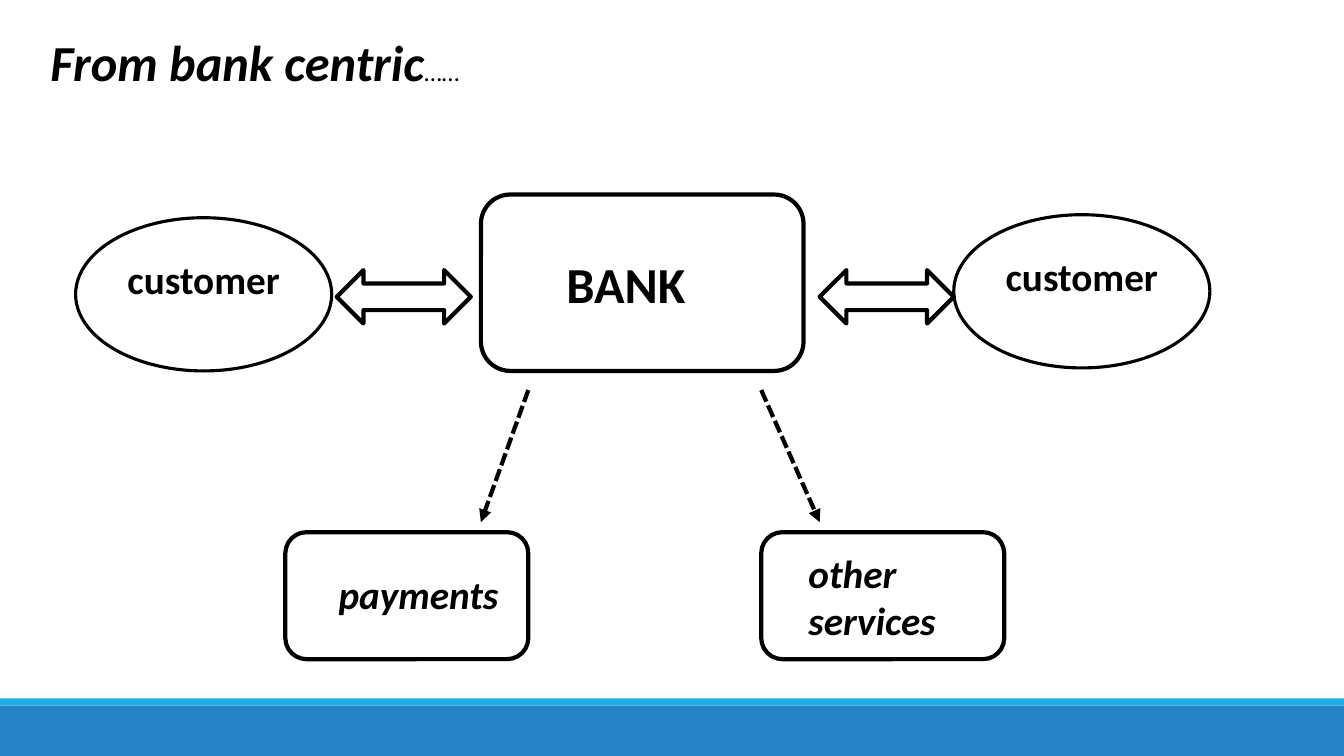
"""Build the bank-centric payments slide."""
from dataclasses import dataclass

from lxml import etree
from pptx import Presentation
from pptx import util as u
from pptx.dml.color import RGBColor
from pptx.enum import dml, shapes, text
from pptx.oxml.ns import qn

PX = 9144
WIDTH, HEIGHT = 1333, 750
FONT = "Calibri"
BLACK = RGBColor(0x00, 0x00, 0x00)
WHITE = RGBColor(0xFF, 0xFF, 0xFF)
BLUE = RGBColor(0x26, 0x83, 0xC6)
CYAN = RGBColor(0x1C, 0xAD, 0xE4)
PRESET = shapes.MSO_SHAPE


@dataclass(frozen=True)
class Area:
    left: int
    top: int
    width: int
    height: int

    def emu(self) -> list[u.Emu]:
        return [u.Emu(n * PX) for n in (self.left, self.top, self.width, self.height)]


@dataclass(frozen=True)
class Figure:
    preset: PRESET
    area: Area
    fill: RGBColor = WHITE
    line_pt: float = 3
    caption: str = ""


@dataclass(frozen=True)
class Label:
    area: Area
    caption: str
    size: int = 28
    italic: bool = True


@dataclass(frozen=True)
class Flow:
    start: tuple[int, int]
    end: tuple[int, int]


BANDS = [
    Figure(PRESET.RECTANGLE, Area(0, 700, WIDTH, 50), BLUE, 0),
    Figure(PRESET.RECTANGLE, Area(0, 693, WIDTH, 7), CYAN, 0),
]
BANK = Figure(PRESET.ROUNDED_RECTANGLE, Area(477, 193, 320, 175))
CUSTOMERS = [
    Figure(PRESET.OVAL, Area(left, top, 254, 152), line_pt=2.25, caption="customer")
    for left, top in ((946, 213), (75, 216))
]
SERVICES = [Figure(PRESET.ROUNDED_RECTANGLE, Area(left, 528, 241, 126)) for left in (283, 755)]
EXCHANGES = [Figure(PRESET.LEFT_RIGHT_ARROW, Area(left, 268, 133, 53)) for left in (334, 813)]
LABELS = [
    Label(Area(552, 246, 244, 71), "BANK", 36, False),
    Label(Area(326, 561, 275, 57), "payments"),
    Label(Area(792, 540, 275, 104), "other\nservices"),
]
FLOWS = [Flow((524, 387), (477, 518)), Flow((755, 387), (813, 518))]


def style(run, size: int, bold: bool = True, italic: bool = False) -> None:
    run.font.name = FONT
    run.font.size = u.Pt(size)
    run.font.bold = bold
    run.font.italic = italic
    run.font.color.rgb = BLACK


def draw_figure(slide, figure: Figure) -> None:
    shape = slide.shapes.add_shape(figure.preset, *figure.area.emu())
    shape.shadow.inherit = False
    shape.fill.solid()
    shape.fill.fore_color.rgb = figure.fill
    if figure.line_pt:
        shape.line.color.rgb = BLACK
        shape.line.width = u.Pt(figure.line_pt)
    else:
        shape.line.fill.background()
    if figure.caption:
        frame = shape.text_frame
        frame.text = figure.caption
        frame.vertical_anchor = text.MSO_ANCHOR.MIDDLE
        frame.margin_bottom = u.Emu(35 * PX)
        frame.paragraphs[0].alignment = text.PP_ALIGN.CENTER
        style(frame.paragraphs[0].runs[0], 28)


def draw_label(slide, label: Label) -> None:
    frame = slide.shapes.add_textbox(*label.area.emu()).text_frame
    frame.word_wrap = True
    frame.text = label.caption
    for paragraph in frame.paragraphs:
        style(paragraph.runs[0], label.size, italic=label.italic)


def draw_flow(slide, flow: Flow) -> None:
    ends = [u.Emu(n * PX) for n in (*flow.start, *flow.end)]
    arrow = slide.shapes.add_connector(shapes.MSO_CONNECTOR.STRAIGHT, *ends)
    arrow.line.color.rgb = BLACK
    arrow.line.width = u.Pt(3)
    arrow.line.dash_style = dml.MSO_LINE.SQUARE_DOT
    properties = arrow._element.spPr
    etree.SubElement(properties.find(qn("a:ln")), qn("a:tailEnd"), type="triangle")
    etree.SubElement(properties, qn("a:effectLst"))


def write_title(slide) -> None:
    title = slide.shapes.title
    title.left, title.top, title.width, title.height = Area(40, 26, 1269, 71).emu()
    frame = title.text_frame
    frame.word_wrap = True
    frame.auto_size = text.MSO_AUTO_SIZE.NONE
    frame.vertical_anchor = text.MSO_ANCHOR.TOP
    heading = frame.paragraphs[0]
    heading.text = "From bank centric"
    heading.alignment = text.PP_ALIGN.LEFT
    style(heading.runs[0], 36, italic=True)
    ellipsis = heading.add_run()
    ellipsis.text = "……"
    style(ellipsis, 18, bold=False)


def main() -> None:
    deck = Presentation()
    deck.slide_width, deck.slide_height = u.Emu(WIDTH * PX), u.Emu(HEIGHT * PX)
    slide = deck.slides.add_slide(deck.slide_layouts[5])
    write_title(slide)
    for figure in (*BANDS, BANK, *CUSTOMERS, *SERVICES, *EXCHANGES):
        draw_figure(slide, figure)
    for label in LABELS:
        draw_label(slide, label)
    for flow in FLOWS:
        draw_flow(slide, flow)
    deck.save("out.pptx")


if __name__ == "__main__":
    main()
